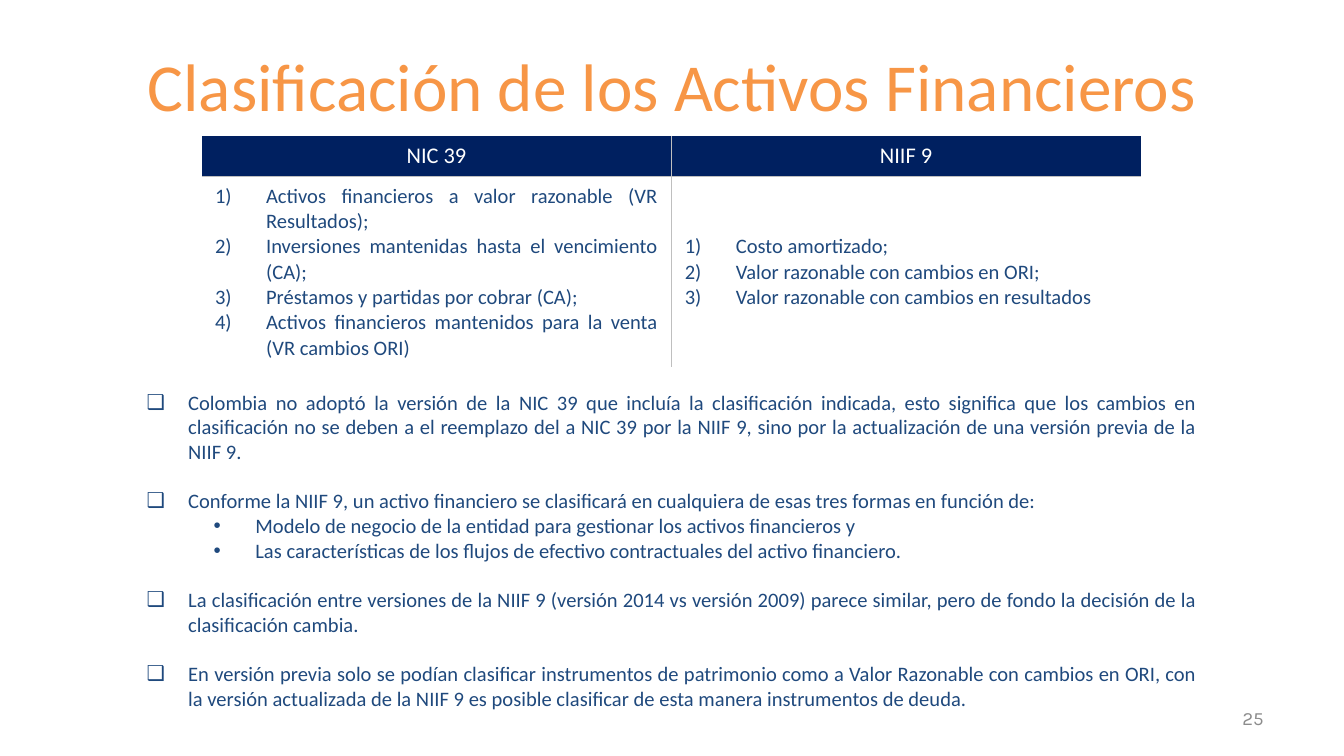
import pptx
import pptx.util
import pptx.dml.color
import pptx.enum.text
import pptx.oxml.ns
import lxml.etree

Inches = pptx.util.Inches
Pt = pptx.util.Pt
ALIGN = pptx.enum.text.PP_ALIGN
ANCHOR = pptx.enum.text.MSO_ANCHOR

COLORS = {"orange": "F79646", "navy": "002060", "blue": "1F497D",
          "white": "FFFFFF", "rule": "BFBFBF", "gray": "8C8C8C"}

TITLE = "Clasificación de los Activos Financieros"
COLUMNS = {
    "NIC 39": ["Activos financieros a valor razonable (VR Resultados);",
               "Inversiones mantenidas hasta el vencimiento (CA);",
               "Préstamos y partidas por cobrar (CA);",
               "Activos financieros mantenidos para la venta (VR cambios ORI)"],
    "NIIF 9": ["Costo amortizado;",
               "Valor razonable con cambios en ORI;",
               "Valor razonable con cambios en resultados"],
}
# Level and wording of each point
POINTS = [
    (0, "Colombia no adoptó la versión de la NIC 39 que incluía la clasificación indicada, "
        "esto significa que los cambios en clasificación no se deben a el reemplazo del a "
        "NIC 39 por la NIIF 9, sino por la actualización de una versión previa de la NIIF 9."),
    (0, "Conforme la NIIF 9, un activo financiero se clasificará en cualquiera de esas tres "
        "formas en función de:"),
    (1, "Modelo de negocio de la entidad para gestionar los activos financieros y"),
    (1, "Las características de los flujos de efectivo contractuales del activo financiero."),
    (0, "La clasificación entre versiones de la NIIF 9 (versión 2014 vs versión 2009) parece "
        "similar, pero de fondo la decisión de la clasificación cambia."),
    (0, "En versión previa solo se podían clasificar instrumentos de patrimonio como a Valor "
        "Razonable con cambios en ORI, con la versión actualizada de la NIIF 9 es posible "
        "clasificar de esta manera instrumentos de deuda."),
]


def rgb(name):
    return pptx.dml.color.RGBColor.from_string(COLORS[name])


def add_xml(parent, tag, **attributes):
    return lxml.etree.SubElement(parent, pptx.oxml.ns.qn(tag), attributes)


def place(shape, box):
    shape.left, shape.top, shape.width, shape.height = [Inches(v) for v in box]


def style(para, size, color, align, font="Calibri"):
    para.alignment = align
    para.font.size = Pt(size)
    para.font.name = font
    para.font.color.rgb = rgb(color)


def set_bullet(para, left, hanging, tag, **attributes):
    props = para._p.get_or_add_pPr()
    props.set("marL", str(Inches(left)))
    props.set("indent", str(-Inches(hanging)))
    add_xml(props, tag, **attributes)


def fill_paragraphs(frame, texts):
    frame.text = "\n".join(texts)
    return frame.paragraphs


def set_borders(cell, sides):
    props = cell._tc.get_or_add_tcPr()
    for position, side in enumerate("LRTB"):
        line = add_xml(props, "a:ln" + side, w=str(Pt(1)))
        if side in sides:
            fill = add_xml(line, "a:solidFill")
            add_xml(fill, "a:srgbClr", val=COLORS["rule"])
            add_xml(line, "a:prstDash", val="solid")
        else:
            add_xml(line, "a:noFill")
        props.insert(position, line)


def add_title(page, box):
    title = page.shapes.title
    place(title, box)
    frame = title.text_frame
    frame.text = TITLE
    frame.vertical_anchor = ANCHOR.MIDDLE
    frame.auto_size = pptx.enum.text.MSO_AUTO_SIZE.NONE
    style(frame.paragraphs[0], 36, "orange", ALIGN.CENTER)


def add_comparison(page, box):
    table = page.shapes.add_table(2, len(COLUMNS), *[Inches(v) for v in box]).table
    table.first_row = table.horz_banding = False
    header_height = 0.3
    table.rows[0].height = Inches(header_height)
    table.rows[1].height = Inches(box[3] - header_height)
    for index, (heading, items) in enumerate(COLUMNS.items()):
        inner = "L" if index else "R"
        header, body = table.cell(0, index), table.cell(1, index)
        # Heading
        header.fill.solid()
        header.fill.fore_color.rgb = rgb("navy")
        header.text = heading
        style(header.text_frame.paragraphs[0], 12, "white", ALIGN.CENTER)
        set_borders(header, inner + "B")
        # Numbered categories
        body.fill.background()
        for para in fill_paragraphs(body.text_frame, items):
            set_bullet(para, 0.38, 0.38, "a:buAutoNum", type="arabicParenR")
            style(para, 11, "blue", ALIGN.JUSTIFY)
        set_borders(body, inner + "T")
        header.vertical_anchor = body.vertical_anchor = ANCHOR.MIDDLE


def add_points(page, box):
    body = page.placeholders[1]
    place(body, box)
    body.fill.solid()
    body.fill.fore_color.rgb = rgb("white")
    frame = body.text_frame
    frame.auto_size = pptx.enum.text.MSO_AUTO_SIZE.NONE
    line_height = Pt(13.2)
    paras = fill_paragraphs(frame, [text for level, text in POINTS])
    for index, (para, (level, text)) in enumerate(zip(paras, POINTS)):
        para.level = level
        set_bullet(para, 0.31 + 0.5 * level, 0.31, "a:buChar", char="❑•"[level])
        style(para, 11, "blue", ALIGN.JUSTIFY)
        para.line_spacing = line_height
        para.space_before = line_height if index and level == 0 else Pt(0)


def add_page_number(page, box):
    frame = page.shapes.add_textbox(*[Inches(v) for v in box]).text_frame
    frame.word_wrap = True
    frame.text = "25"
    style(frame.paragraphs[0], 10, "gray", ALIGN.RIGHT, "Karla")


def main():
    deck = pptx.Presentation()
    # Widescreen, 16 by 9
    deck.slide_width = Inches(10)
    deck.slide_height = deck.slide_width * 9 // 16
    page = deck.slides.add_slide(deck.slide_layouts[1])
    add_title(page, (0.5, 0.3, 9, 0.66))
    add_comparison(page, (1.5, 1.01, 6.99, 1.72))
    add_points(page, (0.99, 2.85, 8.02, 2.51))
    add_page_number(page, (7.17, 5.21, 2.33, 0.3))
    deck.save("out.pptx")


if __name__ == "__main__":
    main()
